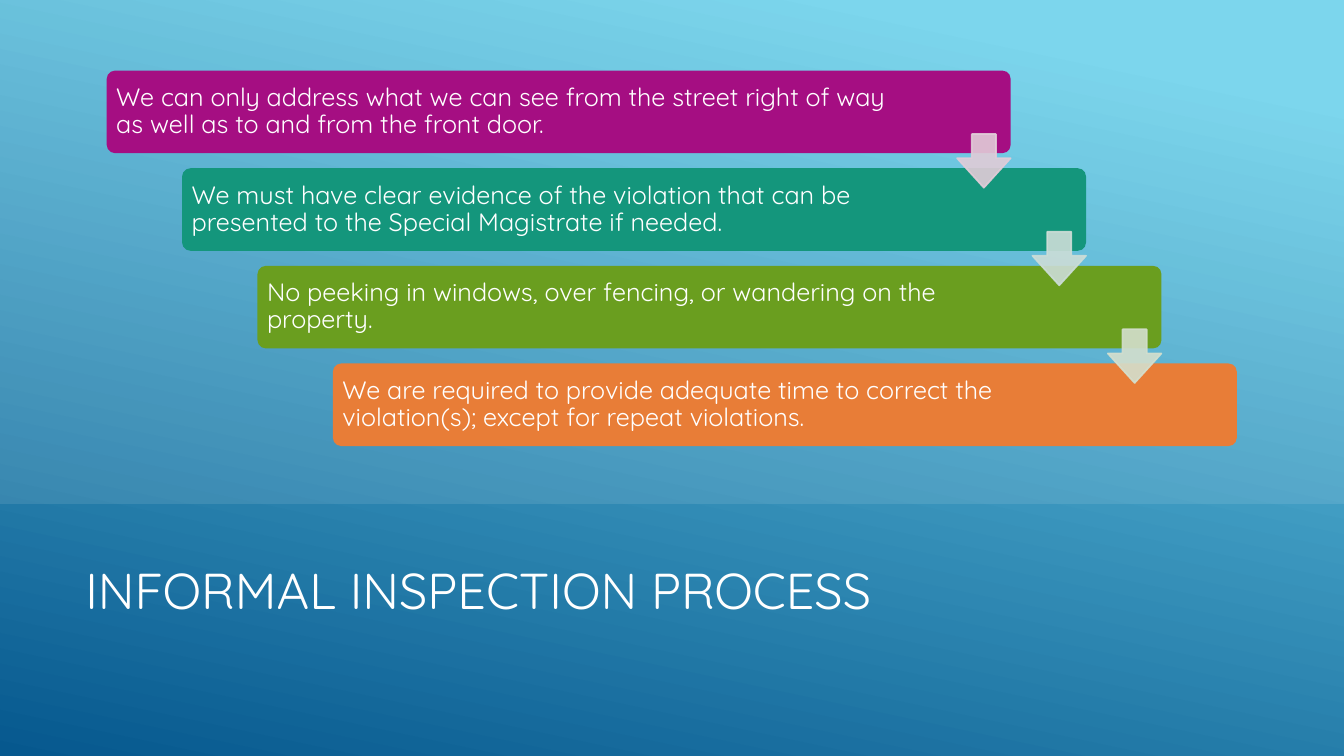
from dataclasses import dataclass

from lxml.etree import SubElement
from pptx import Presentation
from pptx.dml.color import RGBColor
from pptx.enum.shapes import MSO_SHAPE
from pptx.enum.text import MSO_ANCHOR
from pptx.oxml.ns import qn
from pptx.util import Cm, Pt


@dataclass(frozen=True)
class Theme:
    font: str = "Quicksand"
    white: str = "FFFFFF"
    sky: str = "6ED2EB"
    sea: str = "06588E"
    bars: tuple = ("A50E82", "14967C", "6A9E1F", "E87D37")
    arrows: tuple = ("E1CCD8", "CCDDD7", "D4DFCD")
    title: int = 36
    body: int = 18


THEME = Theme()
WIDE, HIGH = 33.87, 19.05
LEFT, TOP = 2.69, 1.78
STEP_X, STEP_Y = 1.9, 2.46
BAR_W, BAR_H = 22.78, 2.08
ARROW = 1.35
EDGE = 0.06
STEPS = (
    ("We can only address what we can see from the street right of way "
     "as well as to and from the front door.", 20.37),
    ("We must have clear evidence of the violation that can be "
     "presented to the Special Magistrate if needed.", 19.41),
    ("No peeking in windows, over fencing, or wandering on the property.", 19.41),
    ("We are required to provide adequate time to correct the "
     "violation(s); except for repeat violations.", 19.41),
)


def place(box):
    return [Cm(size) for size in box]


def fade(fill, alpha):
    color = fill._xPr.find(".//" + qn("a:srgbClr"))
    SubElement(color, qn("a:alpha"), val=str(alpha * 1000))


def add_shape(slide, kind, box, color=None, alpha=100, adjust=(), line=None):
    shape = slide.shapes.add_shape(kind, *place(box))
    shape.shadow.inherit = False
    for index, value in enumerate(adjust):
        shape.adjustments[index] = value
    if color:
        shape.fill.solid()
        shape.fill.fore_color.rgb = RGBColor.from_string(color)
        if alpha < 100:
            fade(shape.fill, alpha)
    if line:
        shape.line.width = Pt(line)
        shape.line.color.rgb = RGBColor.from_string(color)
        fade(shape.line.fill, alpha)
    else:
        shape.line.fill.background()
    return shape


def add_text(slide, text, box, size=THEME.body, color=THEME.white,
             inset=0.18, space=None):
    frame = slide.shapes.add_textbox(*place(box)).text_frame
    frame.word_wrap = True
    frame.vertical_anchor = MSO_ANCHOR.MIDDLE
    frame.margin_left = frame.margin_right = Cm(inset)
    frame.margin_top = frame.margin_bottom = Cm(0.18)
    para = frame.paragraphs[0]
    para.line_spacing = space
    run = para.add_run()
    run.text = text
    run.font.name = THEME.font
    run.font.size = Pt(size)
    run.font.color.rgb = RGBColor.from_string(color)


def add_back(slide):
    back = add_shape(slide, MSO_SHAPE.RECTANGLE, (0, 0, WIDE, HIGH))
    back.fill.gradient()
    back.fill.gradient_angle = 258
    stops = ((0.1, THEME.sky), (1, THEME.sea))
    for stop, (place_at, color) in zip(back.fill.gradient_stops, stops):
        stop.position = place_at
        stop.color.rgb = RGBColor.from_string(color)
    add_shape(slide, MSO_SHAPE.RECTANGLE, (0, 0, WIDE, 12.7), THEME.white, 10)


def add_step(slide, index, text, width):
    left, top = LEFT + index * STEP_X, TOP + index * STEP_Y
    add_shape(slide, MSO_SHAPE.ROUNDED_RECTANGLE, (left, top, BAR_W, BAR_H),
              THEME.bars[index], adjust=(0.1,))
    add_text(slide, text, (left + EDGE, top + EDGE, width, BAR_H - 2 * EDGE),
             space=0.9)


def add_arrow(slide, index, color):
    left = LEFT + index * STEP_X + BAR_W - ARROW
    top = TOP + index * STEP_Y + 1.6
    add_shape(slide, MSO_SHAPE.DOWN_ARROW, (left, top, ARROW, ARROW),
              color, 90, (0.45, 0.55), 1.25)


def main():
    deck = Presentation()
    deck.slide_width, deck.slide_height = Cm(WIDE), Cm(HIGH)
    slide = deck.slides.add_slide(deck.slide_layouts[6])
    add_back(slide)
    add_text(slide, "INFORMAL INSPECTION PROCESS", (1.9, 13.34, 25.76, 3.2),
             size=THEME.title, inset=0.25, space=0.9)
    for index, (text, width) in enumerate(STEPS):
        add_step(slide, index, text, width)
    for index, color in enumerate(THEME.arrows):
        add_arrow(slide, index, color)
    deck.save("out.pptx")


if __name__ == "__main__":
    main()
